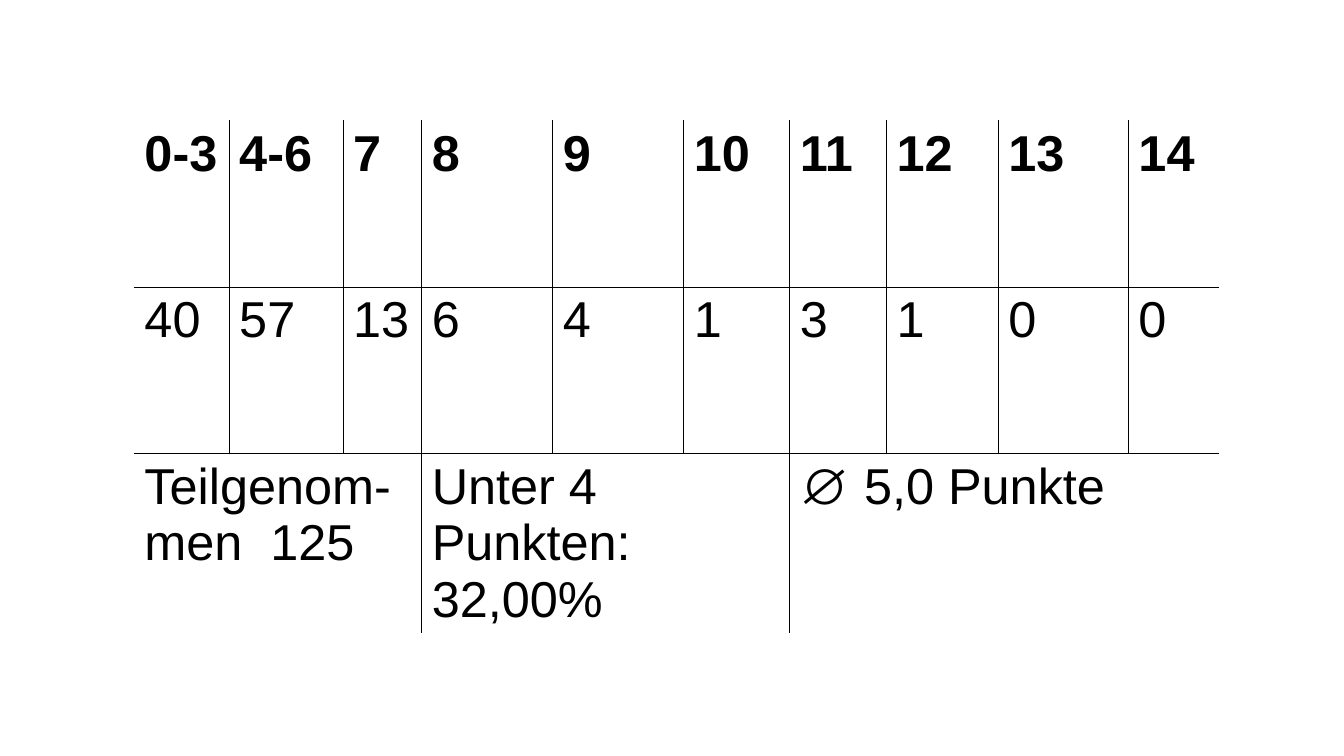
from dataclasses import dataclass

from lxml.etree import SubElement
from pptx import Presentation
from pptx.dml.color import RGBColor
from pptx.oxml.ns import qn
from pptx.table import Table, _Cell
from pptx.util import Inches, Pt

BLACK, WHITE = "000000", "FFFFFF"
FONT, FONT_SIZE, BORDER = "Arial", 36, 1

# Percent of the slide's width and height
TABLE_LEFT, TABLE_TOP = 10, 16
COLUMN_SHARES = [7.05, 8.48, 5.85, 9.75, 9.75, 7.88, 7.2, 8.33, 7.88, 1.73, 6.68]
ROW_SHARES = [22, 22, 23.87]

# Column edges without a visible line: both sides, and the seam after "13"
OPEN_EDGES = {0, 9, len(COLUMN_SHARES)}


@dataclass(frozen=True)
class Entry:
    text: str
    columns: int = 1
    bold: bool = False


POINTS = ["0-3", "4-6", "7", "8", "9", "10", "11", "12", "13", "", "14"]
COUNTS = ["40", "57", "13", "6", "4", "1", "3", "1", "0", "", "0"]
ROWS = [
    [Entry(points, bold=True) for points in POINTS],
    [Entry(count) for count in COUNTS],
    [
        Entry("Teilgenom-men  125", 3),
        Entry("Unter 4 Punkten:\n32,00%", 3),
        Entry("∅ 5,0 Punkte", 5),
    ],
]


def color(value: str) -> RGBColor:
    return RGBColor.from_string(value)


def set_borders(cell: _Cell, sides: dict[str, str]) -> None:
    """Put the side lines ahead of the fill, as the schema asks."""
    properties = cell._tc.get_or_add_tcPr()
    for position, (side, value) in enumerate(sides.items()):
        line = SubElement(properties, qn(f"a:ln{side}"), w=str(Pt(BORDER)))
        fill = SubElement(line, qn("a:solidFill"))
        SubElement(fill, qn("a:srgbClr"), val=value)
        properties.insert(position, line)


def write_text(cell: _Cell, entry: Entry) -> None:
    cell.text_frame.text = entry.text
    for para in cell.text_frame.paragraphs:
        para.font.size = Pt(FONT_SIZE)
        for span in para.runs:
            span.font.name = FONT
            span.font.size = Pt(FONT_SIZE)
            span.font.bold = entry.bold
            span.font.color.rgb = color(BLACK)


def fill_row(table: Table, row: int, entries: list[Entry]) -> None:
    first = 0
    for entry in entries:
        end = first + entry.columns
        sides = {
            "L": WHITE if first in OPEN_EDGES else BLACK,
            "R": WHITE if end in OPEN_EDGES else BLACK,
            "T": WHITE if row == 0 else BLACK,
            "B": WHITE if row == len(ROWS) - 1 else BLACK,
        }
        for column in range(first, end):
            cell = table.cell(row, column)
            cell.fill.solid()
            cell.fill.fore_color.rgb = color(WHITE)
            set_borders(cell, sides)
        if entry.columns > 1:
            table.cell(row, first).merge(table.cell(row, end - 1))
        write_text(table.cell(row, first), entry)
        first = end


def main() -> None:
    deck = Presentation()
    deck.slide_width, deck.slide_height = Inches(13.33), Inches(7.5)
    page = deck.slides.add_slide(deck.slide_layouts[6])

    widths = [int(deck.slide_width * share / 100) for share in COLUMN_SHARES]
    heights = [int(deck.slide_height * share / 100) for share in ROW_SHARES]
    table = page.shapes.add_table(
        len(heights), len(widths),
        int(deck.slide_width * TABLE_LEFT / 100),
        int(deck.slide_height * TABLE_TOP / 100),
        sum(widths), sum(heights),
    ).table
    table.first_row = table.horz_banding = False
    for column, width in zip(table.columns, widths):
        column.width = width
    for row, height in zip(table.rows, heights):
        row.height = height
    for index, entries in enumerate(ROWS):
        fill_row(table, index, entries)

    deck.save("out.pptx")


if __name__ == "__main__":
    main()
